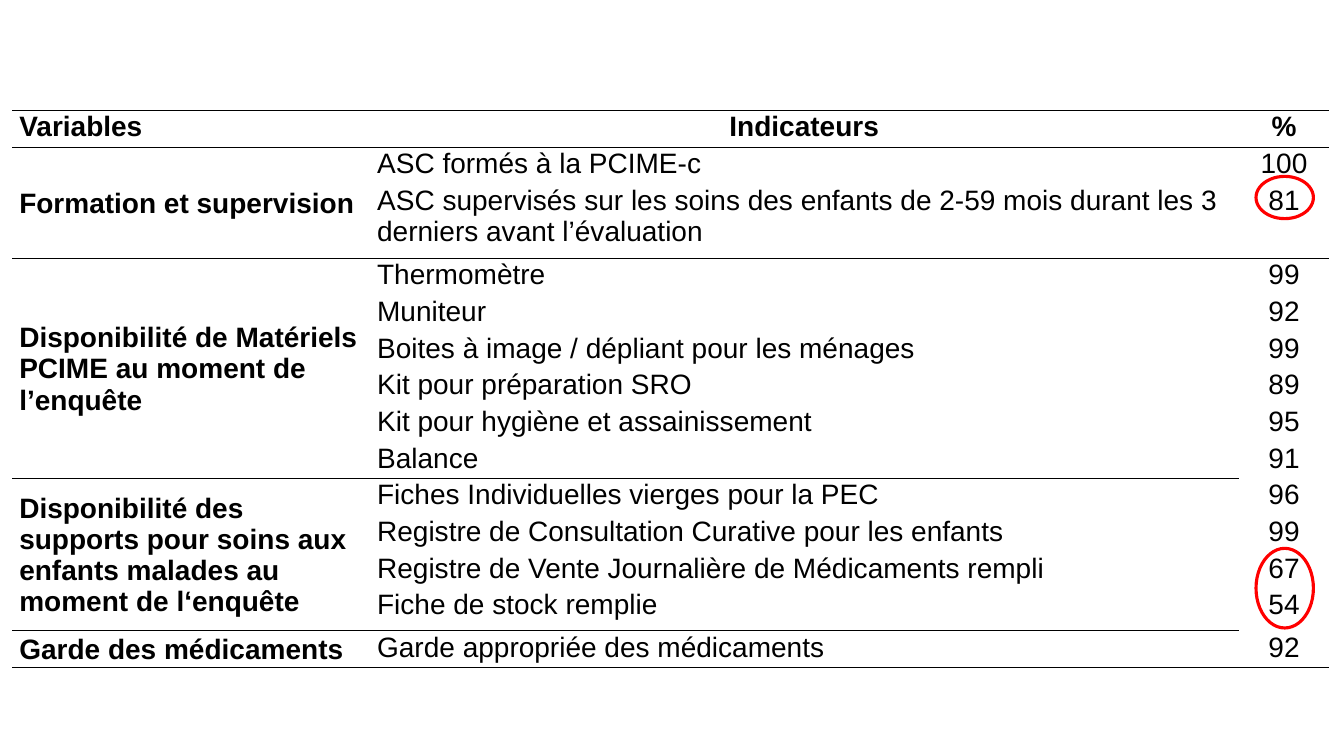
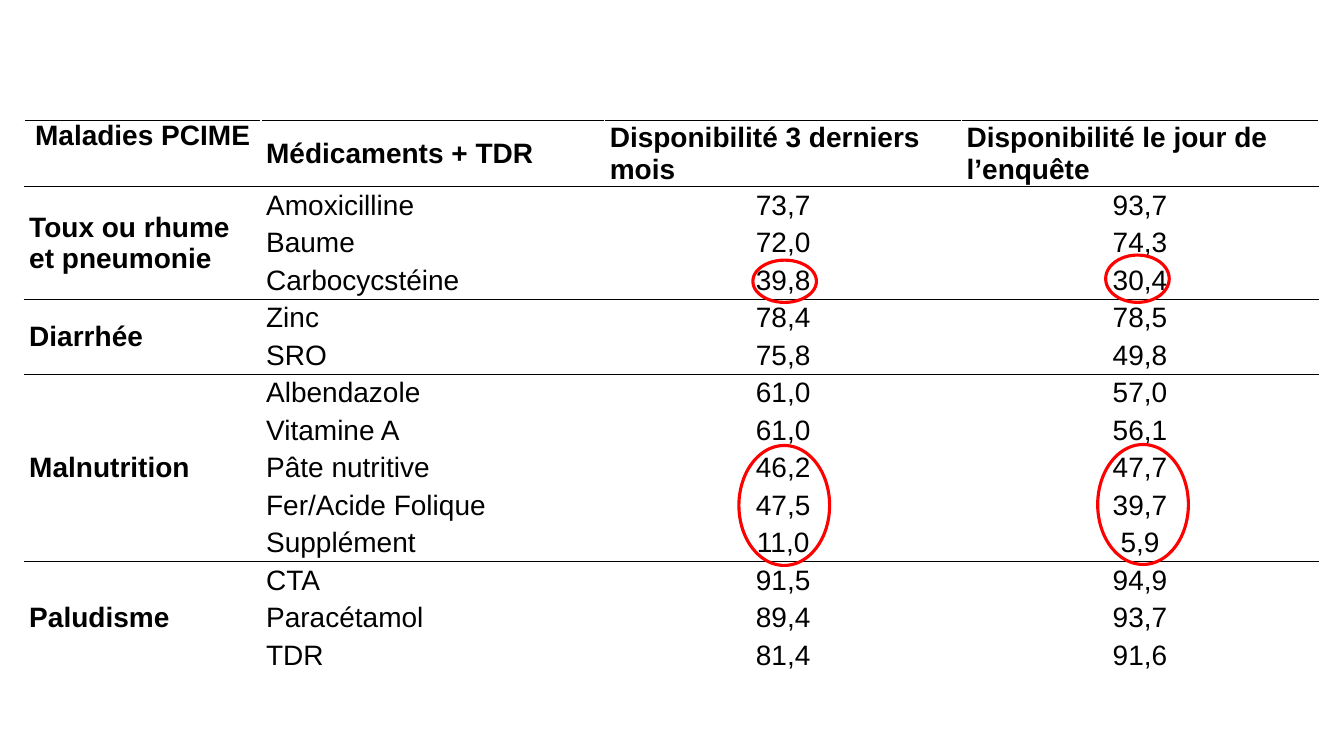
"""Build two slides of survey result tables with the weak values circled."""
from pptx import Presentation
from pptx.dml.color import RGBColor as Rgb
from pptx.enum.shapes import MSO_SHAPE as Shape
from pptx.enum.text import MSO_ANCHOR as Anchor, PP_ALIGN as Align
from pptx.oxml.ns import qn
from pptx.util import Pt
from lxml.etree import SubElement as sub

HUES = {"ink": "000000", "paper": "FFFFFF", "mark": "FF0000"}
LEFT, MID = Align.LEFT, Align.CENTER
TOP, HALF = Anchor.TOP, Anchor.MIDDLE


def put(frame, text, bold=False, align=LEFT, after=0, size=20, hue="ink"):
    para = frame.paragraphs[0]
    para.alignment, para.space_after = align, Pt(after)
    run = para.add_run()
    run.text = text
    font = run.font
    font.name, font.size, font.bold = "Arial", Pt(size), bold
    font.color.rgb = Rgb.from_string(HUES[hue])


class Deck:
    def __init__(self):
        self.file = Presentation()
        self.file.slide_width, self.file.slide_height = Pt(960), Pt(540)
        self.slide = None

    def page(self):
        self.slide = self.file.slides.add_slide(self.file.slide_layouts[6])

    def edge(self, cell, side, hue):
        line = sub(cell._tc.get_or_add_tcPr(), qn(f"a:ln{side}"), w=str(Pt(1)))
        if hue:
            fill = sub(line, qn("a:solidFill"))
            sub(fill, qn("a:srgbClr"), val=HUES[hue])
        else:
            sub(line, qn("a:noFill"))

    def table(self, left, top, cols, rows, head, groups, aligns, anchors,
              pads, after=0, grid=None, open_end=False, gaps=()):
        """Draw a header row and groups, with a rule below each group."""
        shape = self.slide.shapes.add_table(
            len(rows), len(cols), Pt(left), Pt(top), Pt(sum(cols)), Pt(sum(rows)))
        table = shape.table
        table.first_row = table.horz_banding = False
        for col, width in zip(table.columns, cols):
            col.width = Pt(width)
        for row, height in zip(table.rows, rows):
            row.height = Pt(height)
        lines, starts, cuts = [head], {}, [0, 1]
        for label, items in groups:
            starts[len(lines)] = len(items)
            lines += [(label if i == 0 else "", *item)
                      for i, item in enumerate(items)]
            cuts.append(len(lines))
        if open_end:
            cuts.pop()
        for r, line in enumerate(lines):
            part = "head" if r == 0 else "body"
            for c, text in enumerate(line):
                cell = table.cell(r, c)
                span = starts.get(r, 1) if c == 0 else 1
                if span > 1:
                    cell.merge(table.cell(r + span - 1, 0))
                cell.margin_left = cell.margin_right = Pt(pads[0])
                cell.margin_top, cell.margin_bottom = Pt(pads[1]), 0
                cell.vertical_anchor = anchors[part][c]
                for side, cut in zip("LRTB", (None, None, r, r + span)):
                    ruled = cut in cuts and (cut, c) not in gaps
                    self.edge(cell, side, "ink" if ruled else grid)
                cell.fill.solid()
                cell.fill.fore_color.rgb = Rgb.from_string(HUES["paper"])
                if text:
                    put(cell.text_frame, text, bold=r == 0 or c == 0,
                        align=aligns[part][c], after=after)

    def ring(self, left, top, width, height):
        shape = self.slide.shapes.add_shape(
            Shape.OVAL, Pt(left), Pt(top), Pt(width), Pt(height))
        shape.shadow.inherit = False
        shape.fill.background()
        shape.line.color.rgb = Rgb.from_string(HUES["mark"])
        shape.line.width = Pt(2.25)


CARE = [
    ("Formation et supervision", [
        ("ASC formés à la PCIME-c", "100"),
        ("ASC supervisés sur les soins des enfants de 2-59 mois durant les 3 "
         "derniers avant l’évaluation", "81")]),
    ("Disponibilité de Matériels PCIME au moment de l’enquête", [
        ("Thermomètre", "99"),
        ("Muniteur", "92"),
        ("Boites à image / dépliant pour les ménages", "99"),
        ("Kit pour préparation SRO", "89"),
        ("Kit pour hygiène et assainissement", "95"),
        ("Balance", "91")]),
    ("Disponibilité des supports pour soins aux enfants malades au moment de "
     "l‘enquête", [
         ("Fiches Individuelles vierges pour la PEC", "96"),
         ("Registre de Consultation Curative pour les enfants", "99"),
         ("Registre de Vente Journalière de Médicaments rempli", "67"),
         ("Fiche de stock remplie", "54")]),
    ("Garde des médicaments", [("Garde appropriée des médicaments", "92")]),
]
DRUGS = [
    ("Toux ou rhume et pneumonie", [
        ("Amoxicilline", "73,7", "93,7"),
        ("Baume", "72,0", "74,3"),
        ("Carbocycstéine", "39,8", "30,4")]),
    ("Diarrhée", [
        ("Zinc", "78,4", "78,5"),
        ("SRO", "75,8", "49,8")]),
    ("Malnutrition", [
        ("Albendazole", "61,0", "57,0"),
        ("Vitamine A", "61,0", "56,1"),
        ("Pâte nutritive", "46,2", "47,7"),
        ("Fer/Acide Folique", "47,5", "39,7"),
        ("Supplément", "11,0", "5,9")]),
    ("Paludisme", [
        ("CTA", "91,5", "94,9"),
        ("Paracétamol", "89,4", "93,7"),
        ("TDR", "81,4", "91,6")]),
]


def main():
    deck = Deck()
    deck.page()
    deck.table(
        8.6, 79, [255.6, 620.6, 64.8],
        [26.2] * 2 + [53.3] + [26.2] * 9 + [30.2, 26.2],
        ("Variables", "Indicateurs", "%"), CARE,
        aligns={"head": [LEFT, MID, MID], "body": [LEFT, LEFT, MID]},
        anchors={"head": [TOP] * 3, "body": [HALF, TOP, TOP]},
        pads=(5.2, 0.7), after=8, gaps=[(9, 2), (13, 2)])
    for top, height in ((126, 30.2), (391.7, 56.9)):
        deck.ring(897.2, top, 41, height)

    deck.page()
    deck.table(
        17.3, 86, [169.2, 245.5, 254.9, 254.9], [47.5] + [26.8] * 13,
        ("Maladies PCIME", "Médicaments + TDR", "Disponibilité 3 derniers mois",
         "Disponibilité le jour de l’enquête"), DRUGS,
        aligns={"head": [MID] + [LEFT] * 3, "body": [LEFT, LEFT, MID, MID]},
        anchors={"head": [TOP] + [HALF] * 3, "body": [HALF] * 4},
        pads=(3.6, 0), grid="paper", open_end=True)
    for box in ((789.8, 182.2, 45.4, 33.8), (537.8, 185.8, 45.4, 30.2),
                (784.1, 317.5, 64.8, 85.7), (527.8, 318.2, 64.8, 85.7)):
        deck.ring(*box)
    deck.file.save("out.pptx")


if __name__ == "__main__":
    main()
